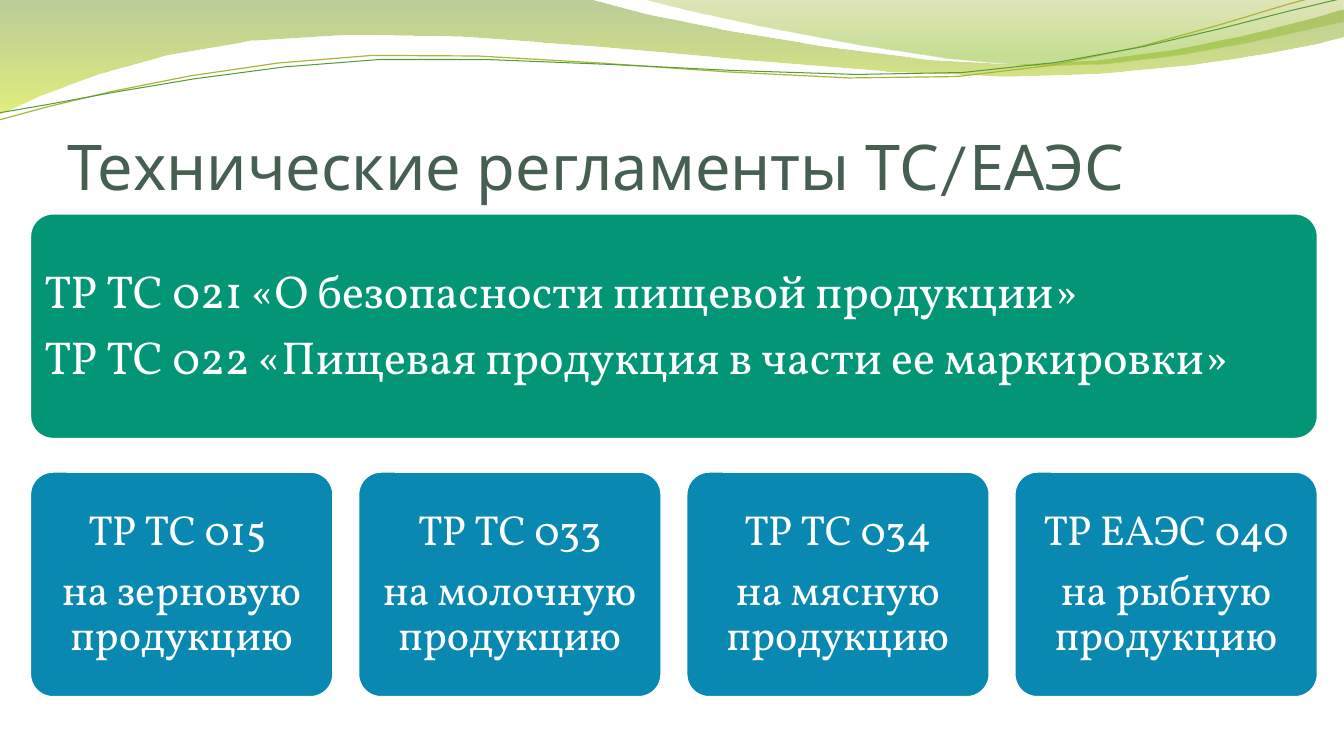
from pptx import Presentation, util as u
from pptx.dml.color import RGBColor
from pptx.enum import shapes, text
from pptx.oxml.ns import qn
from lxml import etree

COLORS = {"title": "455F51", "general": "029676", "product": "0989B1", "white": "FFFFFF",
          "olive": "A9B733", "green": "549E39"}
CURVE_STEPS = 5

presentation = Presentation()
presentation.slide_width, presentation.slide_height = u.Pt(960), u.Pt(540)
slide = presentation.slides.add_slide(presentation.slide_layouts[5])


def add_wave(start, segments, close):
    """Draw a freeform; a segment of one point is a line, of three a Bézier curve."""
    points, current = [], start
    for segment in segments:
        if len(segment) == 1:
            points.append(segment[0])
        else:
            first, second, end = segment
            for step in range(1, CURVE_STEPS + 1):
                t = step / CURVE_STEPS
                weights = ((1 - t) ** 3, 3 * t * (1 - t) ** 2, 3 * t * t * (1 - t), t ** 3)
                points.append([sum(w * p[axis] for w, p in zip(weights, (current, first, second, end)))
                               for axis in (0, 1)])
        current = segment[-1]
    builder = slide.shapes.build_freeform(u.Pt(start[0]), u.Pt(start[1]))
    builder.add_line_segments([(u.Pt(x), u.Pt(y)) for x, y in points], close=close)
    wave = builder.convert_to_shape()
    wave.shadow.inherit = False
    return wave


def fill_text(shape, lines, size, font, color, frame_format, paragraph_format):
    frame = shape.text_frame
    frame.text = "\n".join(lines)
    for name, value in frame_format.items():
        setattr(frame, name, value)
    for paragraph in frame.paragraphs:
        for name, value in paragraph_format.items():
            setattr(paragraph, name, value)
        paragraph.font.name, paragraph.font.size = font, u.Pt(size)
        paragraph.font.color.rgb = RGBColor.from_string(COLORS[color])


# Filled waves: start, segments, gradient stops (position, colour, opacity in percent)
filled_waves = [
    ((-1.4, 0), [
        [(422.6, -0.2)],
        [(456.5, 12.6), (636.5, 45.9), (727.9, 45.9)],
        [(818.6, 45.9), (919.4, 19), (959.8, 6.8)],
        [(960.5, 26.2)],
        [(943.9, 32), (834.5, 55.2), (715.7, 54.5)],
        [(596.9, 54.2), (366.5, 20.9), (247, 24.8)],
        [(123.8, 26.4), (43.9, 60), (-1.4, 81.6)],
    ], [(0, "69921C", 45), (1, "CCE10F", 55)]),
    ((459.4, -0.4), [
        [(488.9, 8.2), (654.5, 44.9), (738, 47.1)],
        [(820.8, 50), (923, 23.3), (959.8, 15.4)],
        [(959.8, 0)],
    ], [(0, "9BAA1A", 30), (0.8, "81BA16", 45)]),
]
for start, segments, stops in filled_waves:
    wave = add_wave(start, segments, True)
    wave.line.fill.background()
    wave.fill.gradient()
    wave.fill.gradient_angle = 270
    for stop, (position, color, opacity) in zip(wave.fill.gradient_stops, stops):
        stop.position = position
        stop.color.rgb = RGBColor.from_string(color)
    for element, (_, _, opacity) in zip(wave.element.iter(qn("a:srgbClr")), stops):
        etree.SubElement(element, qn("a:alpha"), val=str(opacity * 1000))

thin_waves = [
    ((-0.7, 85.7), [
        [(45.4, 72.7), (151.2, 44.6), (265.7, 39.6)],
        [(379.4, 34.6), (568.1, 62.6), (683.3, 54.7)],
        [(799.2, 47.5), (900.7, 5.8), (957.6, -7.2)],
    ], "olive", 0.85),
    ((-0.7, 80.6), [
        [(44.6, 74.2), (157, 47.5), (271.4, 42.5)],
        [(386.6, 38.2), (573.1, 59), (687.6, 51.8)],
        [(802.1, 44.6), (903.6, 10.1), (959.8, -1.4)],
    ], "green", 0.75),
]
for start, segments, color, width in thin_waves:
    wave = add_wave(start, segments, False)
    wave.fill.background()
    wave.line.color.rgb = RGBColor.from_string(COLORS[color])
    wave.line.width = u.Pt(width)

title = slide.shapes.title
title.left, title.top, title.width, title.height = u.Pt(48), u.Pt(55.4), u.Pt(864), u.Pt(90)
title.element.getparent().append(title.element)  # in front of the waves
fill_text(title, ["Технические регламенты ТС/ЕАЭС"], 45, "League Spartan", "title",
          {"vertical_anchor": text.MSO_ANCHOR.BOTTOM, "auto_size": text.MSO_AUTO_SIZE.NONE,
           "word_wrap": True, "margin_left": 0, "margin_right": 0,
           "margin_top": u.Pt(3.6), "margin_bottom": 0},
          {"alignment": text.PP_ALIGN.LEFT})

# Regulations: one wide card above a row of four
LEFT, FULL_WIDTH, CARD_WIDTH, CARD_HEIGHT = 21.8, 919.2, 216, 160.4
GENERAL_TOP, PRODUCT_TOP = 152.8, 337.2
products = [("ТР ТС 015 ", "на зерновую продукцию"), ("ТР ТС 033", "на молочную продукцию"),
            ("ТР ТС 034", "на мясную продукцию"), ("ТР ЕАЭС 040", "на рыбную продукцию")]
pitch = (FULL_WIDTH - CARD_WIDTH) / (len(products) - 1)

# The rounded corners already inset the text by 4.7 pt
cards = [(LEFT, GENERAL_TOP, FULL_WIDTH, "general", 33, 5.3, text.PP_ALIGN.LEFT,
          ("ТР ТС 021 «О безопасности пищевой продукции»",
           "ТР ТС 022 «Пищевая продукция в части ее маркировки»"))]
for column, lines in enumerate(products):
    cards.append((LEFT + column * pitch, PRODUCT_TOP, CARD_WIDTH, "product", 30, 3.9,
                  text.PP_ALIGN.CENTER, lines))

for left, top, width, color, size, margin, alignment, lines in cards:
    card = slide.shapes.add_shape(shapes.MSO_SHAPE.ROUNDED_RECTANGLE, u.Pt(left), u.Pt(top),
                                  u.Pt(width), u.Pt(CARD_HEIGHT))
    card.adjustments[0] = 0.1
    card.shadow.inherit = False
    card.fill.solid()
    card.fill.fore_color.rgb = RGBColor.from_string(COLORS[color])
    card.line.color.rgb = RGBColor.from_string(COLORS["white"])
    card.line.width = u.Pt(1)
    frame_format = {"vertical_anchor": text.MSO_ANCHOR.MIDDLE, "word_wrap": True}
    for side in ("left", "top", "right", "bottom"):
        frame_format["margin_" + side] = u.Pt(margin)
    fill_text(card, lines, size, "Vollkorn", "white", frame_format,
              {"alignment": alignment, "line_spacing": 0.9, "space_after": u.Pt(0.35 * size)})

presentation.save("out.pptx")
